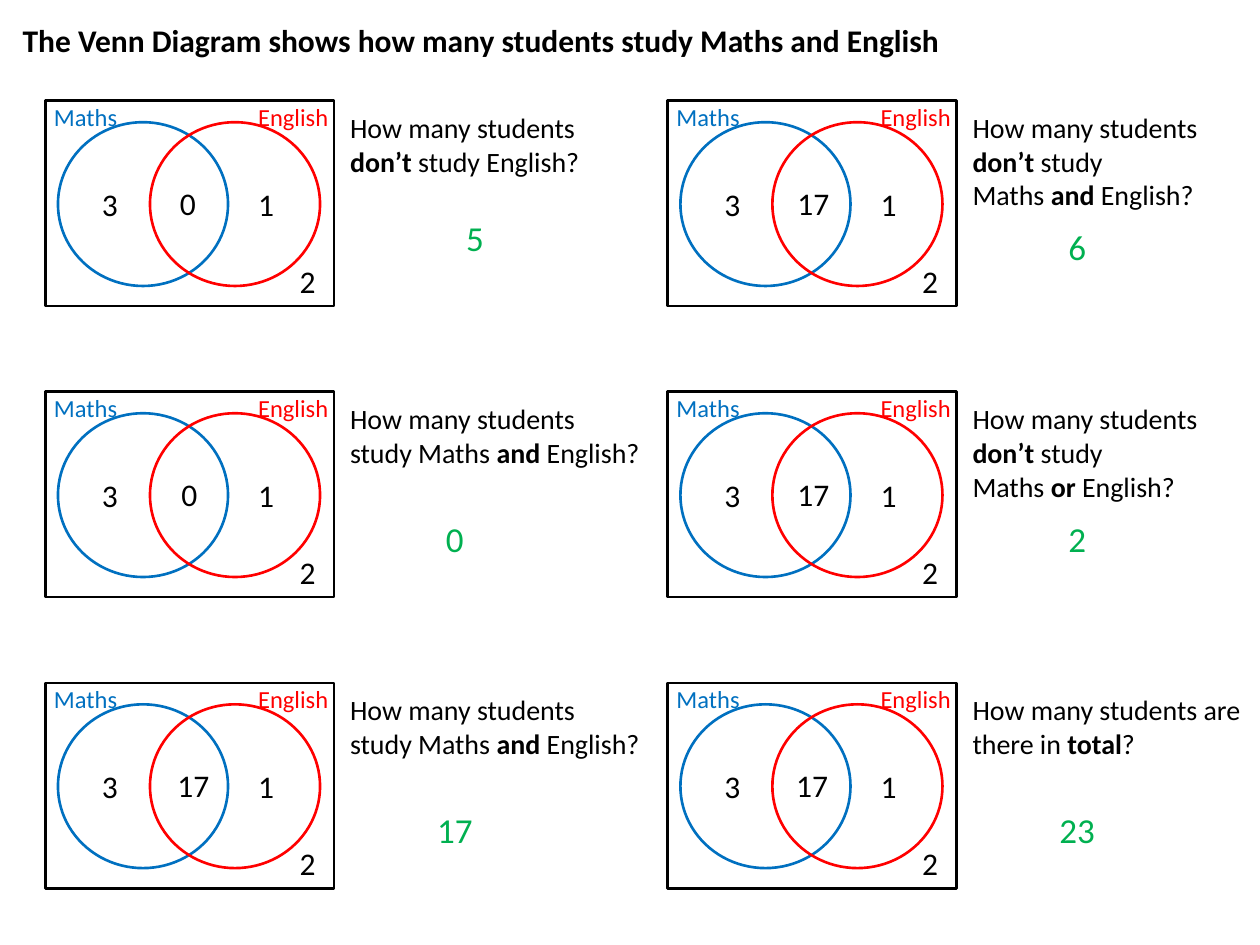
from dataclasses import dataclass
from pptx import Presentation
from pptx.dml import color
from pptx.enum import shapes, text
from pptx.util import Inches, Pt

HUES = {"ink": "000000", "maths": "0070C0", "english": "FF0000", "answer": "00B050"}
FONT = "Calibri"
LEFT, TOP = 0.36, 0.8
STEP_X, STEP_Y = 4.94, 2.31


@dataclass
class Card:
    both: str        # number in the overlap
    both_x: float    # its offset from the frame
    both_w: float
    ask: list[str]   # paragraphs, with ** around bold words
    ask_w: float
    ask_h: float
    reply: str
    reply_x: float   # offsets from the frame
    reply_y: float


CARDS = [
    Card("0", 0.97, 0.36, ["How many students **don’t** study English?"],
         2.42, 0.64, "5", 2.48, 0.87),
    Card("17", 0.93, 0.48, ["How many students **don’t** study", "Maths **and** English?"],
         2.38, 0.91, "6", 2.32, 0.94),
    Card("0", 0.98, 0.48, ["How many students study Maths **and** English?"],
         2.51, 0.64, "0", 2.32, 0.95),
    Card("17", 0.93, 0.48, ["How many students **don’t** study", "Maths **or** English?"],
         2.42, 0.91, "2", 2.32, 0.95),
    Card("17", 0.95, 0.48, ["How many students study Maths **and** English?"],
         2.52, 0.64, "17", 2.32, 0.95),
    Card("17", 0.92, 0.48, ["How many students are there in **total**?"],
         2.42, 0.64, "23", 2.32, 0.95),
]


def rgb(hue: str) -> color.RGBColor:
    return color.RGBColor.from_string(HUES[hue])


def write(shape, lines: list[str], size: int, hue: str = "ink",
          align=text.PP_ALIGN.LEFT) -> None:
    """Fill a shape with paragraphs; words between ** are bold."""
    frame = shape.text_frame
    look = {"word_wrap": True, "auto_size": text.MSO_AUTO_SIZE.NONE,
            "vertical_anchor": text.MSO_ANCHOR.TOP}
    for key, value in look.items():
        setattr(frame, key, value)
    for i, line in enumerate(lines):
        para = frame.add_paragraph() if i else frame.paragraphs[0]
        para.alignment = align
        for j, part in enumerate(line.split("**")):
            if not part:
                continue
            run = para.add_run()
            run.text = part
            style = {"name": FONT, "size": Pt(size), "bold": j % 2 == 1}
            for key, value in style.items():
                setattr(run.font, key, value)
            run.font.color.rgb = rgb(hue)


def label(home, x: float, y: float, w: float, h: float,
          lines: list[str], size: int, **style) -> None:
    box = home.add_textbox(Inches(x), Inches(y), Inches(w), Inches(h))
    write(box, lines, size, **style)


def outline(home, kind, x: float, y: float, w: float, h: float, hue: str) -> None:
    shape = home.add_shape(kind, Inches(x), Inches(y), Inches(w), Inches(h))
    shape.shadow.inherit = False
    shape.fill.background()
    shape.line.color.rgb = rgb(hue)
    shape.line.width = Pt(1.5)


def draw(slide, card: Card, x: float, y: float) -> None:
    home = slide.shapes.add_group_shape().shapes
    # Frame and circles
    kinds = shapes.MSO_SHAPE
    outline(home, kinds.RECTANGLE, x, y, 2.29, 1.63, "ink")
    for dx, hue in ((0.1, "maths"), (0.83, "english")):
        outline(home, kinds.OVAL, x + dx, y + 0.17, 1.35, 1.3, hue)
    # Counts
    label(home, x + card.both_x, y + 0.61, card.both_w, 0.4, [card.both], 18)
    for num, dx, dy in (("3", 0.35, 0.62), ("1", 1.59, 0.62), ("2", 1.92, 1.23)):
        label(home, x + dx, y + dy, 0.36, 0.4, [num], 18)
    # Set names
    label(home, x + 1.59, y - 0.04, 0.8, 0.34, ["English"], 14, hue="english")
    label(home, x - 0.03, y - 0.04, 1.12, 0.34, ["Maths"], 14, hue="maths")
    # Question and answer
    label(home, x + 2.32, y + 0.03, card.ask_w, card.ask_h, card.ask, 16)
    label(slide.shapes, x + card.reply_x, y + card.reply_y, 1.86, 0.44,
          [card.reply], 20, hue="answer", align=text.PP_ALIGN.CENTER)


def main() -> None:
    deck = Presentation()
    deck.slide_width, deck.slide_height = Inches(10), Inches(7.5)
    slide = deck.slides.add_slide(deck.slide_layouts[5])

    # Title
    title = slide.shapes.title
    place = {"left": 0.08, "top": 0.12, "width": 8.18, "height": 0.4}
    for key, value in place.items():
        setattr(title, key, Inches(value))
    write(title, ["**The Venn Diagram shows how many students study Maths and English**"], 18)

    # Two columns of cards
    for i, card in enumerate(CARDS):
        row, col = divmod(i, 2)
        draw(slide, card, LEFT + col * STEP_X, TOP + row * STEP_Y)

    deck.save("out.pptx")


if __name__ == "__main__":
    main()
